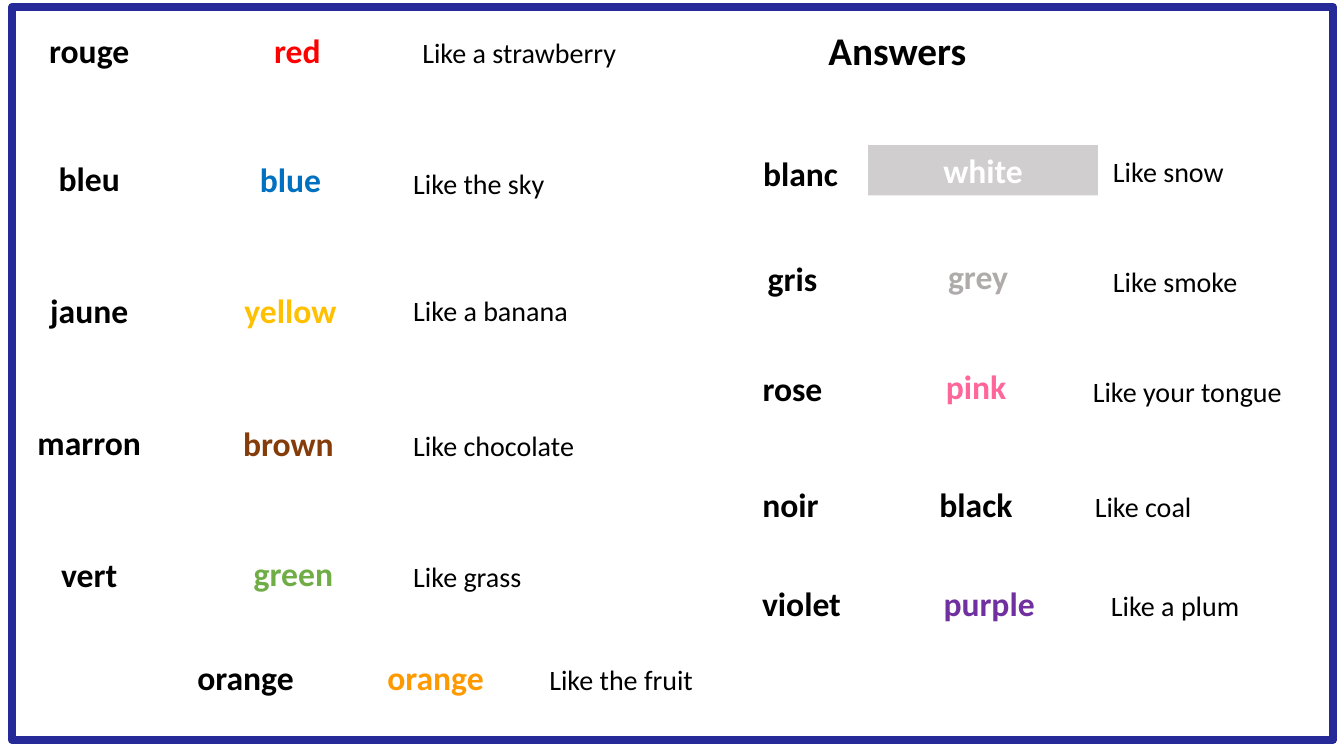
from pptx import Presentation
from pptx import util as u
from pptx.dml.color import RGBColor
from pptx.enum import shapes, text

BLACK = RGBColor(0x00, 0x00, 0x00)
WHITE = RGBColor(0xFF, 0xFF, 0xFF)
SILVER = RGBColor(0xD0, 0xCE, 0xCE)
NAVY = RGBColor(0x25, 0x2A, 0x98)
RED = RGBColor(0xFF, 0x00, 0x00)
BLUE = RGBColor(0x00, 0x70, 0xC0)
YELLOW = RGBColor(0xFF, 0xC0, 0x00)
BROWN = RGBColor(0x84, 0x3C, 0x0B)
GREEN = RGBColor(0x70, 0xAD, 0x47)
ORANGE = RGBColor(0xFF, 0x99, 0x00)
GREY = RGBColor(0xAF, 0xAB, 0xAB)
PINK = RGBColor(0xFF, 0x66, 0x99)
PURPLE = RGBColor(0x70, 0x30, 0xA0)

LEFT, RIGHT = 1.45, 1.24
ROWS = [
    (LEFT, ("rouge", 0.16, 0.25), ("red", 1.81, 0.25, RED),
     ("Like a strawberry", 4.09, 0.3, 2.56)),
    (LEFT, ("bleu", 0.16, 1.52), ("blue", 1.74, 1.53, BLUE),
     ("Like the sky", 4, 1.6, 2.14)),
    (LEFT, ("jaune", 0.16, 2.83), ("yellow", 1.74, 2.83, YELLOW),
     ("Like a banana", 4, 2.86, 2.14)),
    (LEFT, ("marron", 0.16, 4.14), ("brown", 1.72, 4.15, BROWN),
     ("Like chocolate", 4, 4.2, 2.14)),
    (LEFT, ("vert", 0.16, 5.45), ("green", 1.77, 5.44, GREEN),
     ("Like grass", 4, 5.5, 2.14)),
    (LEFT, ("orange", 1.71, 6.47), ("orange", 3.18, 6.47, ORANGE),
     ("Like the fruit", 5.35, 6.52, 2.14)),
    (RIGHT, ("blanc", 7.32, 1.47), ("white", 8.61, 1.44, WHITE),
     ("Like snow", 10.94, 1.48, 1.64)),
    (RIGHT, ("gris", 7.24, 2.51), ("grey", 8.56, 2.49, GREY),
     ("Like smoke", 10.94, 2.58, 1.71)),
    (RIGHT, ("rose", 7.24, 3.6), ("pink", 8.54, 3.58, PINK),
     ("Like your tongue", 10.74, 3.67, 2.56)),
    (RIGHT, ("noir", 7.22, 4.75), ("black", 8.54, 4.75, BLACK),
     ("Like coal", 10.76, 4.81, 2.14)),
    (RIGHT, ("violet", 7.33, 5.73), ("purple", 8.67, 5.73, PURPLE),
     ("Like a plum", 10.92, 5.79, 2.56)),
]


class Board:
    """Draws styled elements on one slide."""

    font = "Calibri"

    def __init__(self, slide):
        self.slide = slide

    def fill_text(self, shape, words, size, color, bold, align):
        frame = shape.text_frame
        frame.word_wrap = True
        frame.auto_size = text.MSO_AUTO_SIZE.SHAPE_TO_FIT_TEXT
        para = frame.paragraphs[0]
        para.text = words
        para.alignment = align
        font = para.font
        font.name, font.size, font.bold = self.font, u.Pt(size), bold
        font.color.rgb = color

    def rect(self, x, y, w, h):
        shape = self.slide.shapes.add_shape(
            shapes.MSO_SHAPE.RECTANGLE, *map(u.Inches, (x, y, w, h)))
        shape.shadow.inherit = False
        return shape

    def card(self, words, x, y, w, color=BLACK):
        shape = self.rect(x, y, w, 0.5)
        shape.fill.solid()
        shape.fill.fore_color.rgb = SILVER if color == WHITE else WHITE
        shape.line.fill.background()
        self.fill_text(shape, words, 24, color, True, text.PP_ALIGN.CENTER)

    def label(self, words, x, y, w, h=0.44, size=20, bold=False,
              align=text.PP_ALIGN.LEFT):
        box = self.slide.shapes.add_textbox(*map(u.Inches, (x, y, w, h)))
        self.fill_text(box, words, size, BLACK, bold, align)

    def border(self, x, y, w, h):
        shape = self.rect(x, y, w, h)
        shape.fill.background()
        shape.line.color.rgb = NAVY
        shape.line.width = u.Pt(6)


def main():
    deck = Presentation()
    deck.slide_width, deck.slide_height = u.Inches(13.33), u.Inches(7.5)
    board = Board(deck.slides.add_slide(deck.slide_layouts[6]))
    for width, french, (english, x, y, color), hint in ROWS:
        board.card(*french, width)
        board.card(english, x, y, 2.28, color)
        board.label(*hint)
    board.label("Answers", 7.77, 0.21, 2.26, 0.57, 28, True,
                text.PP_ALIGN.CENTER)
    board.border(0.12, 0.07, 13.1, 7.27)
    deck.save("out.pptx")


if __name__ == "__main__":
    main()
